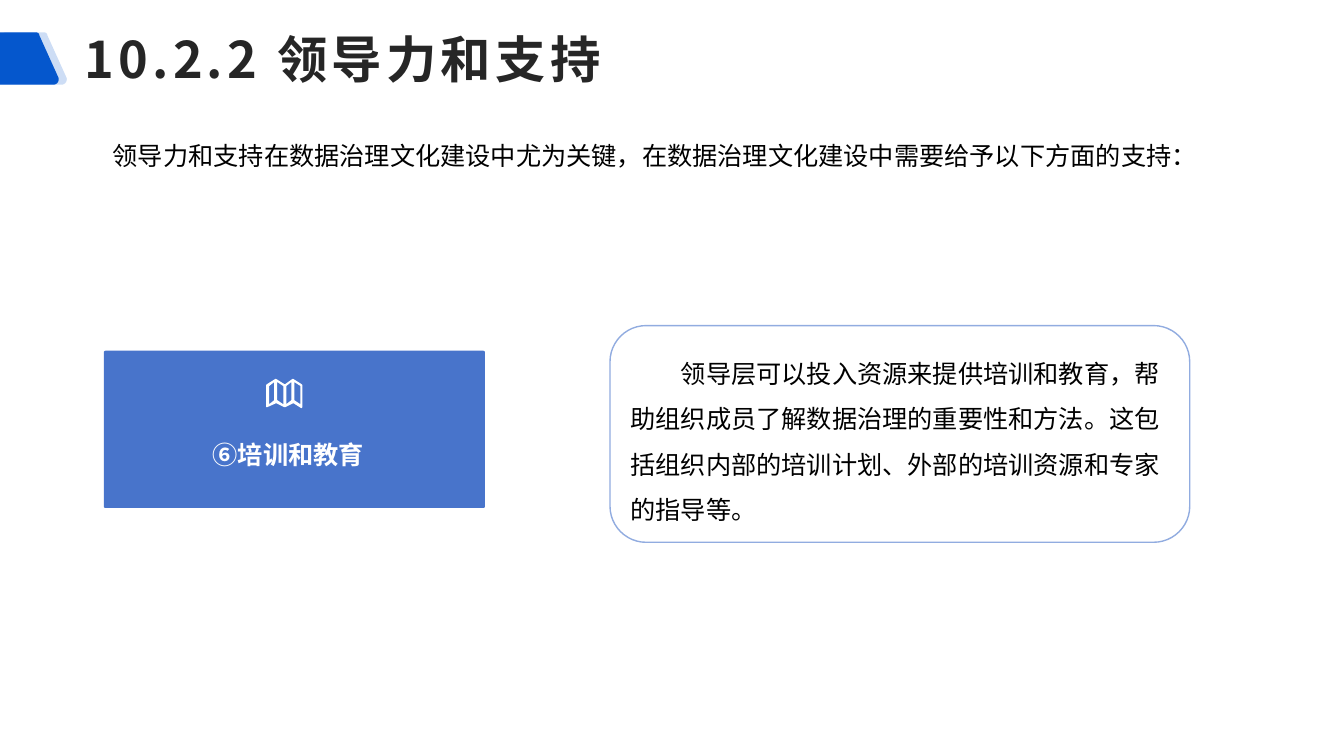
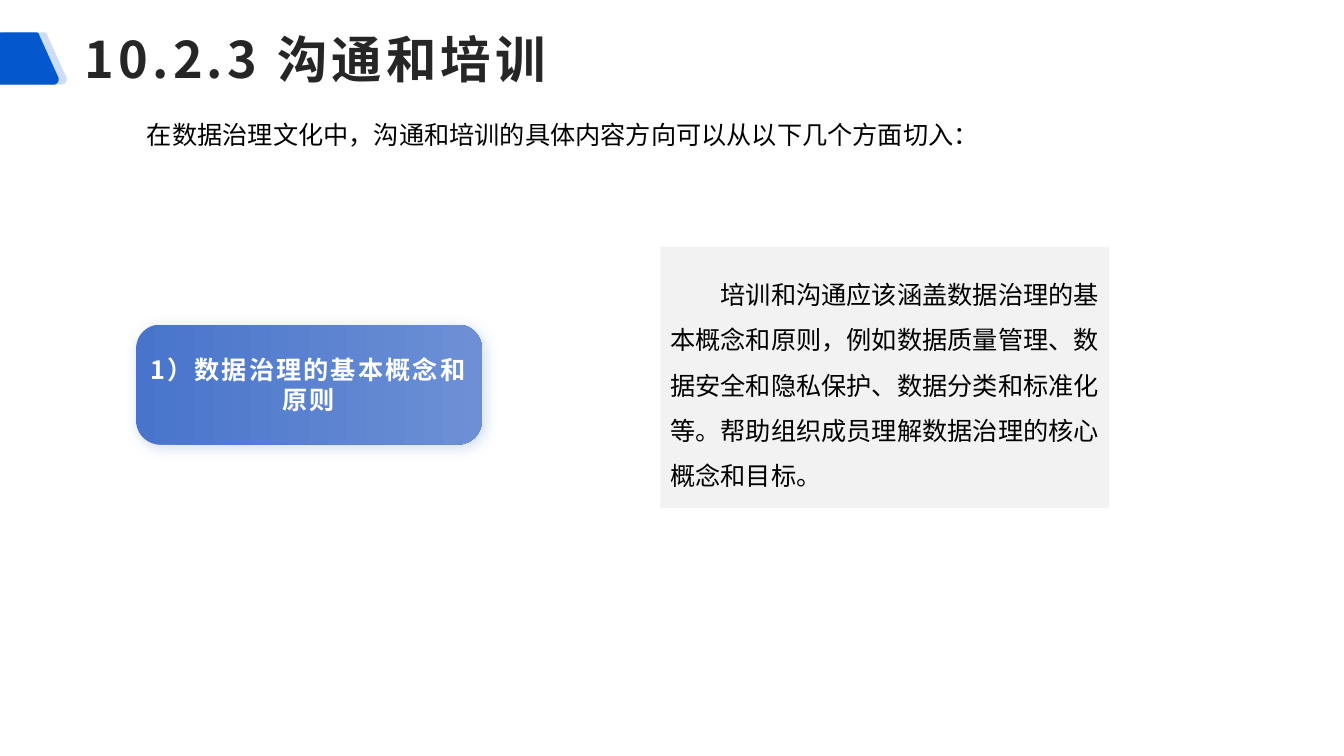
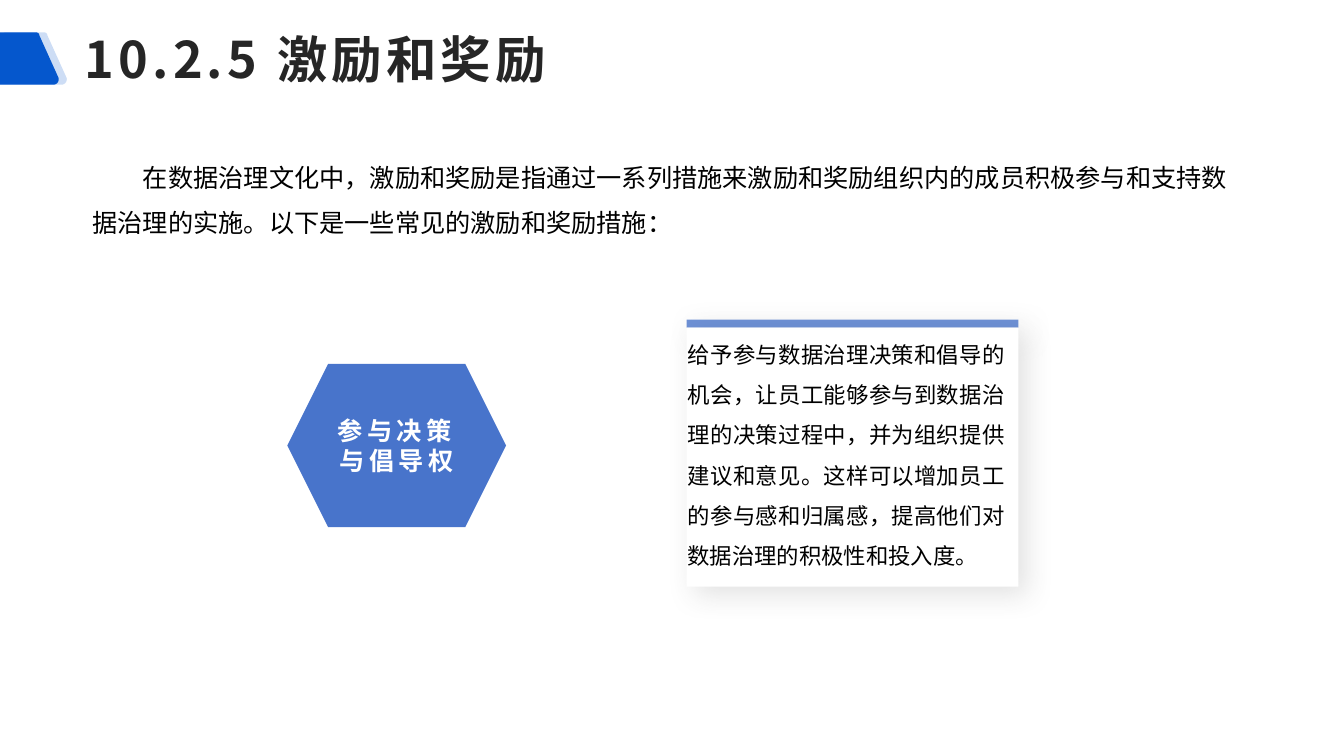
from dataclasses import dataclass, replace
from typing import NamedTuple, Optional

from lxml.etree import SubElement
from pptx import Presentation
from pptx.dml.color import RGBColor
from pptx.enum.shapes import MSO_SHAPE as Preset
from pptx.enum.text import MSO_ANCHOR as Anchor, MSO_AUTO_SIZE as AutoSize, PP_ALIGN as Align
from pptx.oxml.ns import qn
from pptx.util import Pt

PX = 9144
BLUE, LIGHT_BLUE, BAND_BLUE = "4874CB", "6D90D5", "0557CD"
WHITE, BLACK, INK, PALE, OUTLINE = "FFFFFF", "000000", "262626", "F2F2F2", "91ACE0"
SANS = "Noto Sans CJK SC"
BAND_PATH = [
    [(-16, 77)], [(2, 35)], [(3, 33), (4, 32), (6, 32)],
    [(43, 32)], [(45, 32), (47, 33), (47, 35)],
    [(66, 77)], [(67, 80), (65, 84), (61, 84)],
    [(-12, 84)], [(-15, 84), (-18, 80), (-16, 77)],
]
MAP_EDGE = [
    (264, 382), (265, 381), (273, 376), (274, 376), (282, 381), (283, 381),
    (290, 376), (291, 376), (299, 381), (300, 382), (300, 404), (299, 405),
    (291, 400), (283, 404), (282, 404), (274, 400), (265, 404), (264, 404),
]
MAP_PANELS = [(267, 272), (275, 281), (284, 289), (292, 298)]


class Area(NamedTuple):
    left: int
    top: int
    width: int
    height: int


class Shadow(NamedTuple):
    colour: str
    opacity: int
    blur: int
    distance: int


@dataclass(frozen=True)
class TextStyle:
    size: int = 18
    font: str = "Arial"
    colour: str = BLACK
    bold: bool = False
    tracking: int = 0
    align: Align = Align.LEFT
    leading: float = 1.0
    indent: int = 0
    anchor: Anchor = Anchor.TOP
    side_inset: int = 10
    end_inset: int = 5
    fit: AutoSize = AutoSize.NONE


@dataclass(frozen=True)
class Look:
    fill: Optional[str] = None
    fill_end: Optional[str] = None
    opacity: int = 100
    line: Optional[str] = None
    corner: Optional[float] = None
    shadow: Optional[Shadow] = None


TITLE = TextStyle(size=36, font=SANS, colour=INK, bold=True, tracking=300, anchor=Anchor.MIDDLE)
INTRO = TextStyle(fit=AutoSize.SHAPE_TO_FIT_TEXT)
DETAIL = TextStyle(leading=1.5, indent=50, anchor=Anchor.MIDDLE)
LABEL = TextStyle(font=SANS, colour=WHITE, bold=True, align=Align.CENTER, anchor=Anchor.MIDDLE)


def rgb(code: str) -> RGBColor:
    return RGBColor.from_string(code)


def apply(target, values: dict) -> None:
    for name, value in values.items():
        setattr(target, name, value)


def emu(area: Area) -> list[int]:
    return [value * PX for value in area]


def write(frame, text: str, style: TextStyle) -> None:
    side, end = style.side_inset * PX, style.end_inset * PX
    apply(frame, {
        "word_wrap": True, "auto_size": style.fit, "vertical_anchor": style.anchor,
        "margin_left": side, "margin_right": side, "margin_top": end, "margin_bottom": end,
    })
    para = frame.paragraphs[0]
    apply(para, {"alignment": style.align, "line_spacing": style.leading})
    if style.indent:
        para._p.get_or_add_pPr().set("indent", str(style.indent * PX))
    span = para.add_run()
    span.text = text
    apply(span.font, {"size": Pt(style.size), "name": style.font, "bold": style.bold})
    span.font.color.rgb = rgb(style.colour)
    props = span._r.get_or_add_rPr()
    if style.tracking:
        props.set("spc", str(style.tracking))
    east_asian = style.font if style.font.startswith("Noto") else SANS
    SubElement(props, qn("a:ea")).set("typeface", east_asian)


def cast_shadow(shape, shadow: Shadow) -> None:
    effects = next(shape.element.iter(qn("a:effectLst")))
    outer = SubElement(effects, qn("a:outerShdw"), {
        "blurRad": str(int(Pt(shadow.blur))), "dist": str(int(Pt(shadow.distance))),
        "dir": "2700000", "algn": "tl", "rotWithShape": "0",
    })
    colour = SubElement(outer, qn("a:srgbClr"), val=shadow.colour)
    SubElement(colour, qn("a:alpha"), val=str(shadow.opacity * 1000))


def dress(shape, look: Look) -> None:
    shape.shadow.inherit = False
    if look.fill_end:
        shape.fill.gradient()
        shape.fill.gradient_angle = 0
        for stop, code in zip(shape.fill.gradient_stops, (look.fill, look.fill_end)):
            stop.color.rgb = rgb(code)
    elif look.fill:
        shape.fill.solid()
        shape.fill.fore_color.rgb = rgb(look.fill)
    else:
        shape.fill.background()
    if look.opacity < 100:
        colour = next(shape.element.iter(qn("a:srgbClr")))
        SubElement(colour, qn("a:alpha"), val=str(look.opacity * 1000))
    if look.line:
        shape.line.color.rgb = rgb(look.line)
        shape.line.width = Pt(1)
    else:
        shape.line.fill.background()
    if look.corner is not None:
        shape.adjustments[0] = look.corner
    if look.shadow:
        cast_shadow(shape, look.shadow)


def add_panel(shapes, preset: Preset, area: Area, look: Look,
              text: str = "", style: TextStyle = LABEL) -> None:
    shape = shapes.add_shape(preset, *emu(area))
    dress(shape, look)
    if text:
        write(shape.text_frame, text, style)


def add_text(shapes, area: Area, text: str, style: TextStyle) -> None:
    write(shapes.add_textbox(*emu(area)).text_frame, text, style)


def add_outline(shapes, contours: list, look: Look):
    scaled = [[(round(x * PX), round(y * PX)) for x, y in points] for points in contours]
    builder = shapes.build_freeform(*scaled[0][0], scale=1.0)
    builder.add_line_segments(scaled[0][1:], close=True)
    for points in scaled[1:]:
        builder.move_to(*points[0])
        builder.add_line_segments(points[1:], close=True)
    shape = builder.convert_to_shape()
    dress(shape, look)
    return shape


def flatten(path: list, steps: int = 8) -> list:
    points = []
    for segment in path:
        if len(segment) == 1:
            points += segment
            continue
        corners = [points[-1], *segment]
        for step in range(1, steps + 1):
            t = step / steps
            weights = ((1 - t) ** 3, 3 * t * (1 - t) ** 2, 3 * t * t * (1 - t), t ** 3)
            points.append(tuple(sum(w * c[axis] for w, c in zip(weights, corners))
                                for axis in (0, 1)))
    return points


def add_bands(layout, page) -> None:
    outline = flatten(BAND_PATH)
    for order, (shift, opacity) in enumerate([(0, 20), (-8, 100)]):
        points = [(x + shift, y) for x, y in outline]
        band = add_outline(page.shapes, [points], Look(BAND_BLUE, opacity=opacity))
        next(band.element.iter(qn("p:cNvPr"))).set("id", str(101 + order))
        layout.shapes.element.insert(2 + order, band.element)


def add_map_icon(shapes) -> None:
    contours = [MAP_EDGE]
    for index, (left, right) in enumerate(MAP_PANELS):
        start, finish = (379, 383) if index % 2 else (383, 379)
        contours.append([(left, start), (right, finish), (right, finish + 18), (left, start + 18)])
    add_outline(shapes, contours, Look(WHITE))


def add_page(deck, layout, title: str):
    page = deck.slides.add_slide(layout)
    write(page.shapes.title.text_frame, title, TITLE)
    return page


def fill_support(page) -> None:
    add_text(page.shapes, Area(102, 134, 1109, 40),
             "领导力和支持在数据治理文化建设中尤为关键，在数据治理文化建设中需要给予以下方面的支持：", INTRO)
    card = page.shapes.add_group_shape().shapes
    add_panel(card, Preset.ROUNDED_RECTANGLE, Area(103, 348, 378, 156), Look(BLUE, corner=0.01))
    add_map_icon(card)
    add_text(card, Area(85, 416, 402, 75), "⑥培训和教育",
             replace(LABEL, font="Arial", leading=1.5, anchor=Anchor.TOP, side_inset=0))
    add_panel(page.shapes, Preset.ROUNDED_RECTANGLE, Area(605, 323, 575, 215), Look(line=OUTLINE),
              "领导层可以投入资源来提供培训和教育，帮助组织成员了解数据治理的重要性和方法。"
              "这包括组织内部的培训计划、外部的培训资源和专家的指导等。", DETAIL)


def fill_training(page) -> None:
    add_text(page.shapes, Area(136, 113, 983, 40),
             "在数据治理文化中，沟通和培训的具体内容方向可以从以下几个方面切入：", INTRO)
    add_panel(page.shapes, Preset.ROUNDED_RECTANGLE, Area(135, 322, 343, 119),
              Look(BLUE, LIGHT_BLUE, corner=0.2, shadow=Shadow(BLUE, 25, 10, 3)),
              "1）数据治理的基本概念和原则",
              replace(LABEL, tracking=150, side_inset=0, end_inset=0))
    add_panel(page.shapes, Preset.RECTANGLE, Area(655, 245, 445, 259), Look(PALE),
              "培训和沟通应该涵盖数据治理的基本概念和原则，例如数据质量管理、数据安全和隐私保护、"
              "数据分类和标准化等。帮助组织成员理解数据治理的核心概念和目标。",
              replace(DETAIL, font="Times New Roman"))


def fill_rewards(page) -> None:
    card = page.shapes.add_group_shape().shapes
    add_panel(card, Preset.RECTANGLE, Area(681, 317, 329, 8),
              Look(LIGHT_BLUE, shadow=Shadow("BFBFBF", 40, 20, 8)))
    add_panel(card, Preset.RECTANGLE, Area(681, 325, 329, 257),
              Look(WHITE, shadow=Shadow("404040", 15, 20, 8)))
    add_text(card, Area(682, 325, 315, 202),
             "给予参与数据治理决策和倡导的机会，让员工能够参与到数据治理的决策过程中，"
             "并为组织提供建议和意见。这样可以增加员工的参与感和归属感，"
             "提高他们对数据治理的积极性和投入度。",
             TextStyle(size=16, font="Noto Sans CJK JP", align=Align.JUSTIFY,
                       leading=1.5, side_inset=0, end_inset=0))
    add_panel(page.shapes, Preset.HEXAGON, Area(285, 361, 217, 162), Look(BLUE),
              "参与决策与倡导权", replace(LABEL, tracking=300))
    add_text(page.shapes, Area(82, 141, 1163, 101),
             "在数据治理文化中，激励和奖励是指通过一系列措施来激励和奖励组织内的成员积极参与和支持"
             "数据治理的实施。以下是一些常见的激励和奖励措施：",
             replace(INTRO, leading=1.5, indent=50))


def main() -> None:
    deck = Presentation()
    apply(deck, {"slide_width": 1333 * PX, "slide_height": 750 * PX})
    layout = deck.slide_layouts.get_by_name("Title Only")
    place = Area(74, 8, 1259, 100)
    apply(layout.placeholders[0], dict(zip(place._fields, emu(place))))
    chapters = [
        ("10.2.2 领导力和支持", fill_support),
        ("10.2.3 沟通和培训", fill_training),
        ("10.2.5 激励和奖励", fill_rewards),
    ]
    for number, (title, fill_page) in enumerate(chapters):
        page = add_page(deck, layout, title)
        if number == 0:
            add_bands(layout, page)
        fill_page(page)
    deck.save("out.pptx")


if __name__ == "__main__":
    main()
